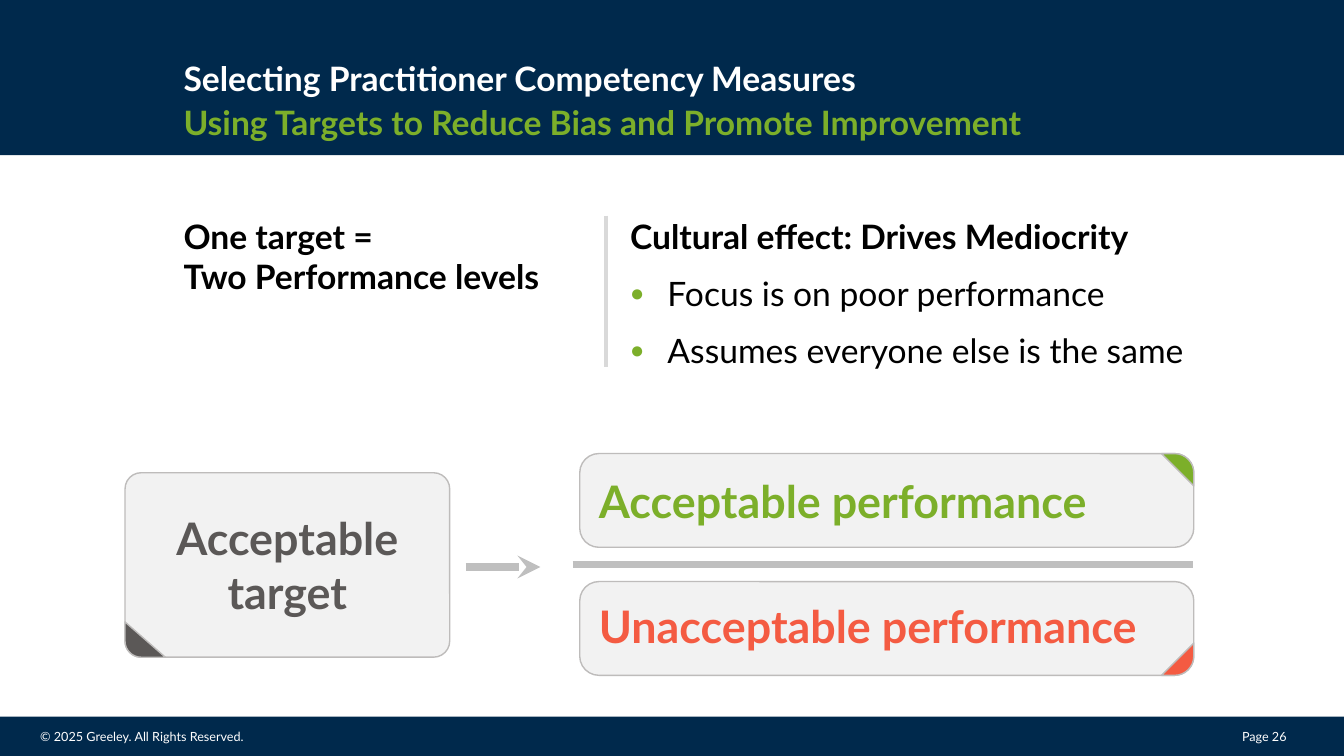
from math import cos, pi, sin

from lxml.etree import SubElement
from pptx import Presentation
from pptx.dml.color import RGBColor
from pptx.enum.shapes import MSO_CONNECTOR as Connector, MSO_SHAPE as Shape
from pptx.enum.text import MSO_ANCHOR as Anchor, MSO_AUTO_SIZE as AutoSize, PP_ALIGN as Align
from pptx.oxml.ns import qn
from pptx.util import Inches, Pt

COLORS = {
    "navy": "00294C", "white": "FFFFFF", "black": "000000", "green": "7CAF2A",
    "red": "F45B42", "slate": "5B5857", "card": "F2F2F2", "edge": "BEBCBB",
    "rule": "BFBFBF", "divider": "D9D9D9",
}
SLIDE_WIDTH, SLIDE_HEIGHT = 13.33, 7.5
NO_MARGINS = dict.fromkeys(("margin_left", "margin_top", "margin_right", "margin_bottom"), 0)


def rgb(name):
    return RGBColor.from_string(COLORS[name])


def apply(target, **values):
    for name, value in values.items():
        setattr(target, name, value)


def place(shape, left, top, width, height):
    apply(shape, left=Inches(left), top=Inches(top), width=Inches(width), height=Inches(height))


def style_runs(paragraph, size, color, bold=False):
    for run in paragraph.runs:
        apply(run.font, name="Lato", size=Pt(size), bold=bold)
        run.font.color.rgb = rgb(color)
    for line_break in paragraph._p.findall(qn("a:br")):
        SubElement(line_break, qn("a:rPr"), sz=str(size * 100))


def paint(shape, fill, edge=None):
    shape.shadow.inherit = False
    shape.fill.solid()
    shape.fill.fore_color.rgb = rgb(fill)
    if edge:
        shape.line.color.rgb = rgb(edge)
        shape.line.width = Pt(1)
    else:
        shape.line.fill.background()


def add_band(slide, top, height):
    band = slide.shapes.add_shape(
        Shape.RECTANGLE, 0, Inches(top), Inches(SLIDE_WIDTH), Inches(height))
    paint(band, "navy")


def add_label(slide, box, text, size, color, bold=False, align=Align.LEFT, indent=0.1):
    label = slide.shapes.add_textbox(*map(Inches, box))
    apply(label.text_frame, word_wrap=True, auto_size=AutoSize.SHAPE_TO_FIT_TEXT,
          margin_left=Inches(indent))
    paragraph = label.text_frame.paragraphs[0]
    apply(paragraph, text=text, alignment=align)
    style_runs(paragraph, size, color, bold)


def add_line(slide, start, end, color, width, arrow=False):
    line = slide.shapes.add_connector(Connector.STRAIGHT, *map(Inches, (*start, *end)))
    line.line.color.rgb = rgb(color)
    line.line.width = Pt(width)
    if arrow:
        SubElement(line.line._get_or_add_ln(), qn("a:tailEnd"), type="stealth")
    SubElement(line._element.spPr, qn("a:effectLst"))


def add_card(slide, box, radius, fold_color, fold_size, fold_side):
    left, top, width, height = box
    card = slide.shapes.add_shape(Shape.ROUNDED_RECTANGLE, *map(Inches, box))
    card.adjustments[0] = radius / height
    paint(card, "card", "edge")

    across, down = fold_side
    corner_x = left + width * across
    corner_y = top + height * down
    fold_width, fold_height = fold_size
    arc = [(radius * (1 - cos(step * pi / 16)), radius * (1 - sin(step * pi / 16)))
           for step in range(9)]
    outline = [(Inches(corner_x + x * (1 - 2 * across)), Inches(corner_y + y * (1 - 2 * down)))
               for x, y in [(fold_width, 0), (0, fold_height), *arc]]
    builder = slide.shapes.build_freeform(*outline[0])
    builder.add_line_segments(outline[1:], close=True)
    paint(builder.convert_to_shape(), fold_color, "edge")


def set_bullet(paragraph, bulleted):
    indent = Inches(0.37) if bulleted else 0
    properties = paragraph._p.get_or_add_pPr()
    properties.set("marL", str(indent))
    properties.set("indent", str(-indent))
    if bulleted:
        color = SubElement(properties, qn("a:buClr"))
        SubElement(color, qn("a:srgbClr"), val=COLORS["green"])
        SubElement(properties, qn("a:buSzPct"), val="70000")
        SubElement(properties, qn("a:buChar"), char="●")
    else:
        SubElement(properties, qn("a:buNone"))


def fill_body(body, box, heading, points=()):
    place(body, *box)
    apply(body.text_frame, word_wrap=True, auto_size=AutoSize.NONE,
          vertical_anchor=Anchor.TOP, **NO_MARGINS)
    for index, text in enumerate([heading, *points]):
        bulleted = index > 0
        paragraph = body.text_frame.add_paragraph() if bulleted else body.text_frame.paragraphs[0]
        set_bullet(paragraph, bulleted)
        apply(paragraph, text=text, level=int(bulleted), line_spacing=1.0,
              space_before=Pt(6 if bulleted else 0), space_after=Pt(6))
        style_runs(paragraph, 24, "black", bold=not bulleted)


def add_header(slide, height):
    add_band(slide, 0, height)
    title = slide.shapes.title
    slide.shapes._spTree.append(title._element)
    place(title, 1.82, 0.16, 9.37, height - 0.13 - 0.16)
    apply(title.text_frame, word_wrap=True, auto_size=AutoSize.NONE,
          vertical_anchor=Anchor.BOTTOM, **NO_MARGINS)
    paragraph = title.text_frame.paragraphs[0]
    apply(paragraph, alignment=Align.LEFT, line_spacing=1.08,
          text="Selecting Practitioner Competency Measures\v"
               "Using Targets to Reduce Bias and Promote Improvement")
    style_runs(paragraph, 24, "white", bold=True)
    paragraph.runs[1].font.color.rgb = rgb("green")


def add_footer(slide, top):
    add_band(slide, top, SLIDE_HEIGHT - top)
    for left, width, text in [(0.3, 4.48, "© 2025 Greeley. All Rights Reserved."),
                              (12.22, 1.05, "Page 26")]:
        add_label(slide, (left, top + 0.07, width, 0.26), text, 9, "white")


def add_statements(slide, top):
    target, effect = [body for body in slide.placeholders if body.placeholder_format.idx > 0]
    fill_body(target, (1.82, top, 4.19, 0.86), "One target =\vTwo Performance levels")
    fill_body(effect, (6.25, top, 6.04, 1.64), "Cultural effect: Drives Mediocrity",
              ["Focus is on poor performance", "Assumes everyone else is the same"])
    add_line(slide, (6.01, top), (6.01, top + 1.5), "divider", 2.25)


def add_target(slide, box):
    left, top, width, height = box
    add_card(slide, box, 0.16, "slate", (0.4, 0.35), (0, 1))
    add_label(slide, (left, top + 0.33, width, 1.18), "Acceptable\vtarget",
              32, "slate", True, Align.CENTER)
    middle = top + height / 2 + 0.02
    add_line(slide, (left + width + 0.16, middle), (left + width + 0.9, middle),
             "rule", 5.5, arrow=True)


def add_levels(slide, box):
    left, top, width, height = box
    card_height = 0.93
    levels = [("Acceptable performance", "green", top, 0.15, 0),
              ("Unacceptable performance", "red", top + height - card_height, 0.12, 1)]
    for text, color, card_top, offset, fold_down in levels:
        add_card(slide, (left, card_top, width, card_height), 0.19, color,
                 (0.32, 0.32), (1, fold_down))
        add_label(slide, (left, card_top + offset, width, 0.64), text, 32, color, True, indent=0.19)
    add_line(slide, (left - 0.07, top + height / 2), (left + width - 0.01, top + height / 2),
             "rule", 5)


def main():
    deck = Presentation()
    apply(deck, slide_width=Inches(SLIDE_WIDTH), slide_height=Inches(SLIDE_HEIGHT))
    slide = deck.slides.add_slide(deck.slide_layouts[3])
    add_footer(slide, 7.11)
    add_header(slide, 1.54)
    add_statements(slide, 2.14)
    add_target(slide, (1.24, 4.69, 3.22, 1.83))
    add_levels(slide, (5.75, 4.5, 6.09, 2.2))
    deck.save("out.pptx")


if __name__ == "__main__":
    main()
